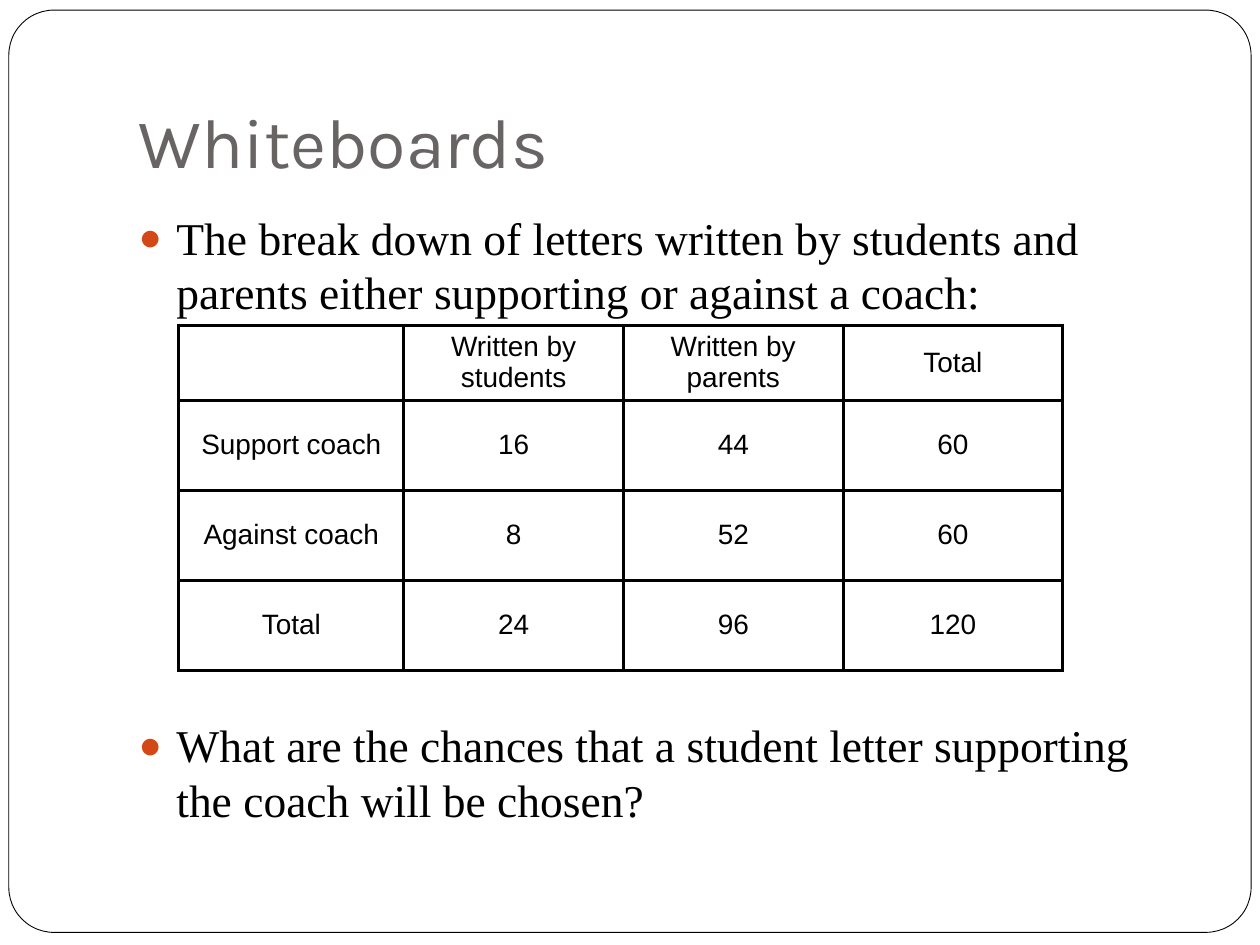
from lxml import etree
from pptx import Presentation
from pptx.dml.color import RGBColor
from pptx.enum import shapes, text
from pptx.oxml import ns
from pptx.util import Pt

BLACK = RGBColor(0, 0, 0)
WHITE = RGBColor(255, 255, 255)
GREY = RGBColor(0x69, 0x64, 0x64)
ORANGE = RGBColor(0xD3, 0x48, 0x17)

TITLE = "Whiteboards"
# Bullet text with the space before it; the table sits in the large gap
BULLETS = [
    ("The break down of letters written by students and "
     "parents either supporting or against a coach:", 0),
    ("What are the chances that a student letter supporting "
     "the coach will be chosen?", 227.7),
]
ROWS = [
    ["", "Written by students", "Written by parents", "Total"],
    ["Support coach", "16", "44", "60"],
    ["Against coach", "8", "52", "60"],
    ["Total", "24", "96", "120"],
]

FRAME_BOX = (5.04, 5.76, 709.92, 527.04)
TITLE_BOX = (72, 21.6, 612, 90)
BODY_BOX = (72, 113.8, 612, 360)
TABLE_LEFT, TABLE_TOP = 102.2, 185.8
COLUMN_WIDTHS = [128.6, 125.5, 125.5, 125.5]
ROW_HEIGHTS = [42.9, 51.4, 51.4, 51.4]
INDENT = 21.6

TITLE_FONT = {"name": "Karla", "size": Pt(40)}
BODY_FONT = {"name": "Times New Roman", "size": Pt(26)}
CELL_FONT = {"name": "Arial", "size": Pt(16)}


def apply(target, values):
    for name, value in values.items():
        setattr(target, name, value)


def place(shape, box):
    apply(shape, dict(zip(("left", "top", "width", "height"), map(Pt, box))))


def write(paragraph, content, font, color):
    run = paragraph.add_run()
    run.text = content
    apply(run.font, font)
    run.font.color.rgb = color


def add_element(parent, tag, **attributes):
    return etree.SubElement(parent, ns.qn(tag), attributes)


def set_bullet(paragraph):
    properties = paragraph._p.get_or_add_pPr()
    properties.set("marL", str(Pt(INDENT)))
    properties.set("indent", str(-Pt(INDENT)))
    color = add_element(properties, "a:buClr")
    add_element(color, "a:srgbClr", val=str(ORANGE))
    add_element(properties, "a:buSzPct", val="85000")
    add_element(properties, "a:buChar", char="●")


def set_borders(cell):
    properties = cell._tc.get_or_add_tcPr()
    for position, side in enumerate(("a:lnL", "a:lnR", "a:lnT", "a:lnB")):
        line = etree.Element(ns.qn(side), w=str(Pt(2)))
        fill = add_element(line, "a:solidFill")
        add_element(fill, "a:srgbClr", val=str(BLACK))
        properties.insert(position, line)


def add_frame(slide):
    frame = slide.shapes.add_shape(
        shapes.MSO_SHAPE.ROUNDED_RECTANGLE, *map(Pt, FRAME_BOX))
    frame.adjustments[0] = 0.049
    frame.shadow.inherit = False
    frame.fill.solid()
    frame.fill.fore_color.rgb = WHITE
    frame.line.color.rgb = BLACK
    frame.line.width = Pt(0.5)
    slide.shapes._spTree.insert(2, frame._element)  # behind the placeholders


def fill_title(title):
    place(title, TITLE_BOX)
    apply(title.text_frame, {
        "vertical_anchor": text.MSO_ANCHOR.BOTTOM,
        "auto_size": text.MSO_AUTO_SIZE.NONE,
        "margin_bottom": Pt(7.2),
    })
    paragraph = title.text_frame.paragraphs[0]
    paragraph.alignment = text.PP_ALIGN.LEFT
    write(paragraph, TITLE, TITLE_FONT, GREY)


def fill_body(body):
    place(body, BODY_BOX)
    frame = body.text_frame
    apply(frame, {"auto_size": text.MSO_AUTO_SIZE.NONE, "margin_top": Pt(6)})
    for index, (content, gap) in enumerate(BULLETS):
        paragraph = frame.add_paragraph() if index else frame.paragraphs[0]
        apply(paragraph, {"space_before": Pt(gap), "line_spacing": Pt(31.2)})
        set_bullet(paragraph)
        write(paragraph, content, BODY_FONT, BLACK)


def add_letter_table(slide):
    table = slide.shapes.add_table(
        len(ROWS), len(COLUMN_WIDTHS), Pt(TABLE_LEFT), Pt(TABLE_TOP),
        Pt(sum(COLUMN_WIDTHS)), Pt(sum(ROW_HEIGHTS))).table
    apply(table, {"first_row": False, "horz_banding": False})
    for column, width in zip(table.columns, COLUMN_WIDTHS):
        column.width = Pt(width)
    for row, height, contents in zip(table.rows, ROW_HEIGHTS, ROWS):
        row.height = Pt(height)
        for cell, content in zip(row.cells, contents):
            apply(cell, {
                "vertical_anchor": text.MSO_ANCHOR.MIDDLE,
                "margin_top": Pt(3), "margin_bottom": Pt(3),
            })
            cell.fill.solid()
            cell.fill.fore_color.rgb = WHITE
            set_borders(cell)
            if content:
                paragraph = cell.text_frame.paragraphs[0]
                paragraph.alignment = text.PP_ALIGN.CENTER
                write(paragraph, content, CELL_FONT, BLACK)


def main():
    presentation = Presentation()
    apply(presentation, {"slide_width": Pt(720), "slide_height": Pt(540)})
    slide = presentation.slides.add_slide(presentation.slide_layouts[1])
    add_frame(slide)
    fill_title(slide.shapes.title)
    fill_body(slide.placeholders[1])
    add_letter_table(slide)
    presentation.save("out.pptx")


if __name__ == "__main__":
    main()
